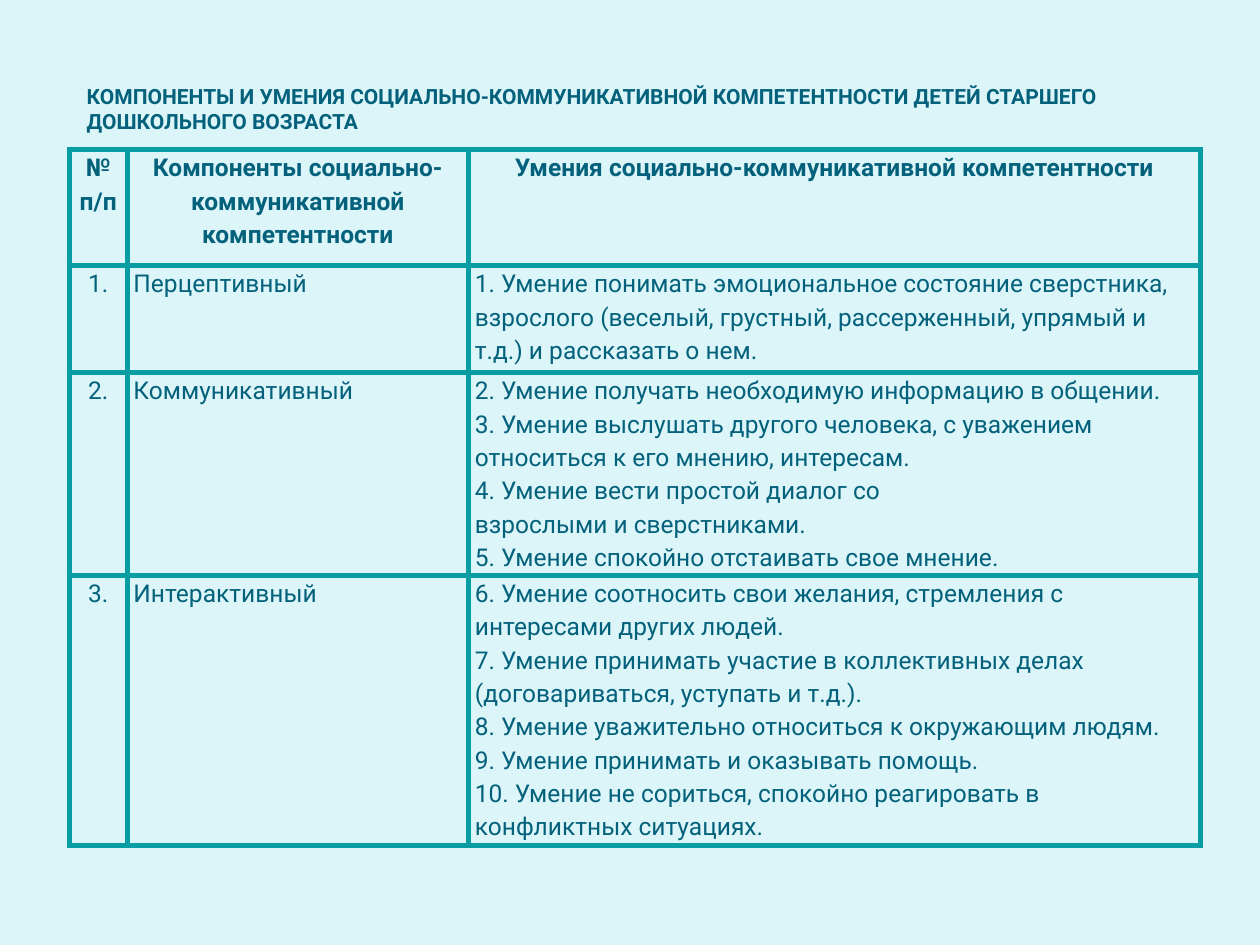
import dataclasses

import pptx
import pptx.dml.color
import pptx.enum.text
import pptx.oxml
import pptx.oxml.ns
import pptx.util

Pt = pptx.util.Pt
ALIGN = pptx.enum.text.PP_ALIGN
COLORS = {"background": "DBF5F9", "text": "04617B", "border": "089CA3"}
FONT = "Roboto"
COLUMN_WIDTHS = (33.1, 195.1, 418.3)
BORDER_WIDTH = 3


@dataclasses.dataclass(frozen=True)
class Component:
    number: str
    name: str
    skills: tuple[str, ...]
    height: float
    header: bool = False


COMPONENTS = (
    Component(
        "№ п/п",
        "Компоненты социально-коммуникативной компетентности",
        ("Умения социально-коммуникативной компетентности",),
        66.3,
        header=True,
    ),
    Component(
        "1.",
        "Перцептивный",
        (
            "1. Умение понимать эмоциональное состояние сверстника, взрослого "
            "(веселый, грустный, рассерженный, упрямый и т.д.) и рассказать о нем.",
        ),
        61.2,
    ),
    Component(
        "2.",
        "Коммуникативный",
        (
            "2. Умение получать необходимую информацию в общении.",
            "3. Умение выслушать другого человека, с уважением относиться к его мнению, интересам.",
            "4. Умение вести простой диалог со",
            "взрослыми и сверстниками.",
            "5. Умение спокойно отстаивать свое мнение.",
        ),
        114,
    ),
    Component(
        "3.",
        "Интерактивный",
        (
            "6. Умение соотносить свои желания, стремления с интересами других людей.",
            "7. Умение принимать участие в коллективных делах (договариваться, уступать и т.д.).",
            "8. Умение уважительно относиться к окружающим людям.",
            "9. Умение принимать и оказывать помощь.",
            "10. Умение не сориться, спокойно реагировать в конфликтных ситуациях.",
        ),
        152.6,
    ),
)


def rgb(name: str) -> pptx.dml.color.RGBColor:
    return pptx.dml.color.RGBColor.from_string(COLORS[name])


def add_run(p, text: str, size: float, bold: bool) -> None:
    r = p.add_run()
    r.text = text
    r.font.name = FONT
    r.font.size = Pt(size)
    r.font.bold = bold
    r.font.color.rgb = rgb("text")


def add_title(s, text: str) -> None:
    sp = s.shapes.add_textbox(Pt(42.5), Pt(43.2), Pt(612), Pt(33.8))
    tf = sp.text_frame
    tf.word_wrap = True
    tf.margin_top = Pt(4.6)
    tf.margin_bottom = 0
    add_run(tf.paragraphs[0], text, 12, True)


def add_borders(cell) -> None:
    tc_pr = cell._tc.get_or_add_tcPr()
    for side in "LRTB":
        tc_pr.append(pptx.oxml.parse_xml(
            f'<a:ln{side} {pptx.oxml.ns.nsdecls("a")} w="{Pt(BORDER_WIDTH)}">'
            f'<a:solidFill><a:srgbClr val="{COLORS["border"]}"/></a:solidFill>'
            f'</a:ln{side}>'
        ))


def fill_cell(cell, lines: tuple[str, ...], align, bold: bool) -> None:
    add_borders(cell)
    cell.fill.background()
    cell.margin_left = cell.margin_right = Pt(3.6)
    cell.margin_top = cell.margin_bottom = 0
    tf = cell.text_frame
    for i, line in enumerate(lines):
        p = tf.add_paragraph() if i else tf.paragraphs[0]
        p.alignment = align
        p.line_spacing = 1.15
        add_run(p, line, 14, bold)


def add_components_table(s, components: tuple[Component, ...]) -> None:
    table = s.shapes.add_table(
        len(components), len(COLUMN_WIDTHS), Pt(39.6), Pt(85.5),
        Pt(sum(COLUMN_WIDTHS)), Pt(sum(c.height for c in components)),
    ).table
    table.first_row = table.horz_banding = False
    for column, width in zip(table.columns, COLUMN_WIDTHS):
        column.width = Pt(width)
    for i, component in enumerate(components):
        table.rows[i].height = Pt(component.height)
        contents = ((component.number,), (component.name,), component.skills)
        for j, lines in enumerate(contents):
            align = ALIGN.CENTER if component.header or j == 0 else ALIGN.LEFT
            fill_cell(table.cell(i, j), lines, align, component.header)


def main() -> None:
    """Build the slide on components of children's social communication."""
    prs = pptx.Presentation()
    prs.slide_width, prs.slide_height = Pt(720), Pt(540)
    s = prs.slides.add_slide(prs.slide_layouts[6])
    s.background.fill.solid()
    s.background.fill.fore_color.rgb = rgb("background")
    add_title(
        s,
        "КОМПОНЕНТЫ И УМЕНИЯ СОЦИАЛЬНО-КОММУНИКАТИВНОЙ КОМПЕТЕНТНОСТИ "
        "ДЕТЕЙ СТАРШЕГО ДОШКОЛЬНОГО ВОЗРАСТА",
    )
    add_components_table(s, COMPONENTS)
    prs.save("out.pptx")


if __name__ == "__main__":
    main()
